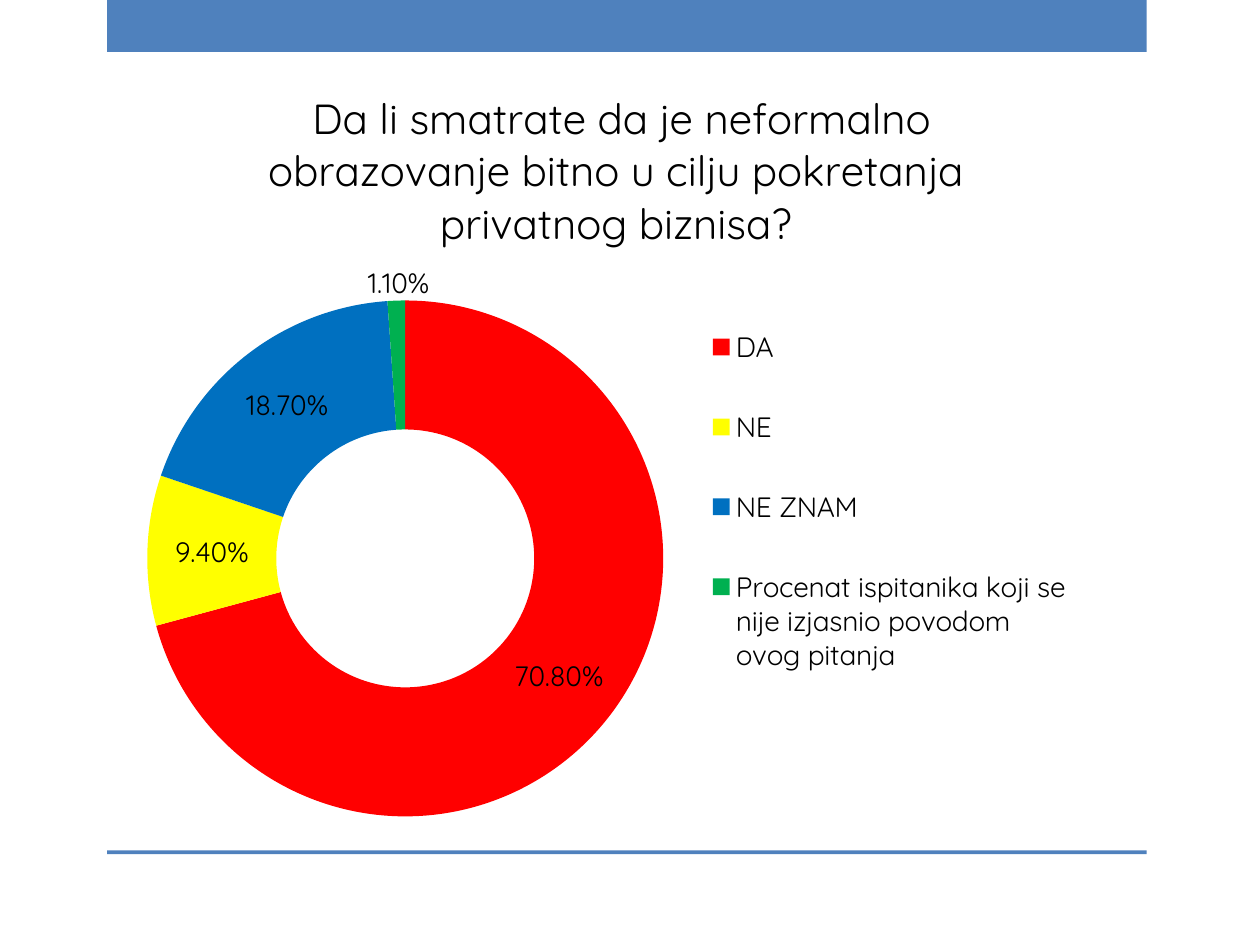
from dataclasses import dataclass

from lxml import etree
from pptx import Presentation
from pptx import util as u
from pptx.chart.data import CategoryChartData
from pptx.dml.color import RGBColor
from pptx.enum import chart as ch, shapes
from pptx.oxml.ns import qn


@dataclass(frozen=True)
class Theme:
    font: str = "Quicksand"
    ink: str = "000000"
    bar: str = "4F81BD"
    head: int = 24
    body: int = 16


THEME = Theme()
WIDE, HIGH = 10, 7.5
TITLE = " Da li smatrate da je neformalno obrazovanje bitno u cilju pokretanja privatnog biznisa?"
DATA = [
    ("DA", 0.708, "FF0000"),
    ("NE", 0.094, "FFFF00"),
    ("NE ZNAM", 0.187, "0070C0"),
    ("Procenat ispitanika koji se nije izjasnio povodom ovog pitanja", 0.011, "00B050"),
]


def share(box, left, top, wide, high):
    """Return the part of a box given by shares of its size."""
    x, y, w, h = box
    return x + left * w, y + top * h, wide * w, high * h


def style(font, size=THEME.body, color=THEME.ink, bold=False):
    font.name, font.size, font.bold = THEME.font, u.Pt(size), bold
    font.color.rgb = RGBColor.from_string(color)


def write(frame, words, **form):
    frame.text = words
    style(frame.paragraphs[0].runs[0].font, **form)


def paint(fill, color):
    fill.solid()
    fill.fore_color.rgb = RGBColor.from_string(color)


def place(node, after, **spots):
    """Give a chart part a manual layout, set right after the named child."""
    for old in node.findall(qn("c:layout")):
        node.remove(old)
    layout = etree.Element(qn("c:layout"))
    manual = etree.SubElement(layout, qn("c:manualLayout"))
    for key, val in spots.items():
        etree.SubElement(manual, qn("c:" + key)).set("val", str(val))
    if after:
        node.find(qn("c:" + after)).addnext(layout)
    else:
        node.insert(0, layout)


def add_bar(slide, box):
    bar = slide.shapes.add_shape(shapes.MSO_SHAPE.RECTANGLE, *map(u.Inches, box))
    bar.shadow.inherit = False
    paint(bar.fill, THEME.bar)
    bar.line.fill.background()


def add_frame(slide, box):
    add_bar(slide, share(box, 0, 0, 1, 0.055))
    add_bar(slide, share(box, 0, 0.9, 1, 0.004))


def add_title(chart):
    chart.has_title = True
    title = chart.chart_title
    write(title.text_frame, TITLE, size=THEME.head)
    place(title._element, "tx", xMode="edge", yMode="edge", x=0.145, y=0.02)


def add_labels(series, last):
    """Label each part by value, and lift the last label off the ring."""
    labels = series.data_labels
    labels.show_value, labels.show_percentage = True, False
    labels.number_format, labels.number_format_is_linked = "0.00%", False
    style(labels.font)
    style(series.points[last].data_label.font)
    node = series._element.find(".//" + qn("c:dLbl"))
    place(node, "idx", x=0, y=-0.1)


def add_legend(chart):
    chart.has_legend = True
    legend = chart.legend
    legend.position = ch.XL_LEGEND_POSITION.RIGHT
    legend.include_in_layout = False
    style(legend.font)
    place(legend._element, "legendPos", xMode="edge", yMode="edge",
          x=0.59, y=0.27, w=0.37, h=0.53)


def add_ring(slide, box):
    data = CategoryChartData(number_format="0.00%")
    names, vals, colors = zip(*DATA)
    data.categories = names
    data.add_series(TITLE, vals)
    chart = slide.shapes.add_chart(
        ch.XL_CHART_TYPE.DOUGHNUT, *map(u.Inches, box), data).chart
    style(chart.font)
    add_title(chart)
    plot = chart.plots[0]
    plot.vary_by_categories = True
    series = plot.series[0]
    for spot, color in enumerate(colors):
        point = series.points[spot].format
        paint(point.fill, color)
        point.line.fill.background()
    add_labels(series, len(DATA) - 1)
    add_legend(chart)
    area = chart._chartSpace.find(".//" + qn("c:plotArea"))
    place(area, None, layoutTarget="inner", xMode="edge", yMode="edge",
          x=0.03, y=0.29, w=0.52, h=0.63)


def main():
    deck = Presentation()
    deck.slide_width, deck.slide_height = u.Inches(WIDE), u.Inches(HIGH)
    slide = deck.slides.add_slide(deck.slide_layouts[6])
    page = (0, 0, WIDE, HIGH)
    add_frame(slide, share(page, 0.085, 0, 0.825, 1))
    add_ring(slide, (0.92, 0.5, 7.92, 6.5))
    deck.save("out.pptx")


if __name__ == "__main__":
    main()
